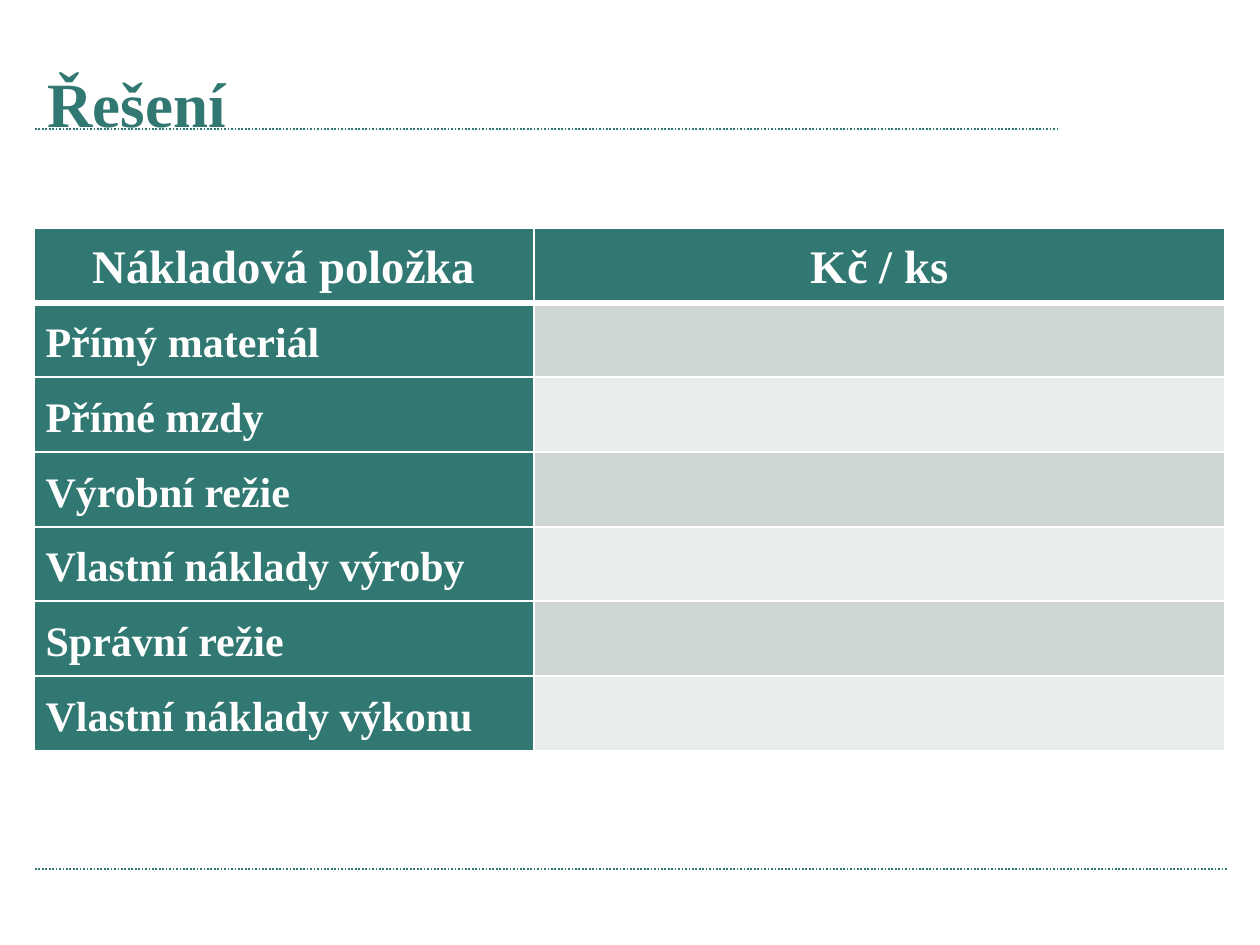
from lxml.etree import SubElement
from pptx import Presentation
from pptx.dml.color import RGBColor
from pptx.enum.dml import MSO_LINE
from pptx.enum.shapes import MSO_CONNECTOR
from pptx.enum.text import MSO_ANCHOR, PP_ALIGN
from pptx.oxml.ns import qn
from pptx.util import Cm, Pt

TEAL, WHITE = "307871", "FFFFFF"
BANDS = ["CDD6D5", "E8ECEB"]
HEADERS = ["Nákladová položka", "Kč / ks"]
ITEMS = ["Přímý materiál", "Přímé mzdy", "Výrobní režie",
         "Vlastní náklady výroby", "Správní režie", "Vlastní náklady výkonu"]


def add_text(p, text, size, color):
    r = p.add_run()
    r.text = text
    r.font.name = "Times New Roman"
    r.font.size = Pt(size)
    r.font.bold = True
    r.font.color.rgb = RGBColor.from_string(color)


def set_borders(cell, widths):
    """Draw white borders; widths maps a side (L, R, T, B) to points."""
    tcPr = cell._tc.get_or_add_tcPr()
    for i, (side, width) in enumerate(widths.items()):
        ln = SubElement(tcPr, qn(f"a:ln{side}"), w=str(Pt(width)))
        fill = SubElement(ln, qn("a:solidFill"))
        SubElement(fill, qn("a:srgbClr"), val=WHITE)
        tcPr.insert(i, ln)


prs = Presentation()
prs.slide_width, prs.slide_height = Cm(19.05), Cm(14.29)
s = prs.slides.add_slide(prs.slide_layouts[5])

# Rules under the title and above the footer
for right, y in [(15.98, 1.95), (18.57, 13.14)]:
    rule = s.shapes.add_connector(MSO_CONNECTOR.STRAIGHT, Cm(0.53), Cm(y), Cm(right), Cm(y))
    rule.line.color.rgb = RGBColor.from_string(TEAL)
    rule.line.width = Pt(0.75)
    rule.line.dash_style = MSO_LINE.ROUND_DOT
    SubElement(rule._element.spPr, qn("a:effectLst"))

title = s.shapes.title
title.left, title.top, title.width, title.height = Cm(0.46), Cm(0.74), Cm(16.79), Cm(1.5)
tf = title.text_frame
tf.vertical_anchor = MSO_ANCHOR.BOTTOM
p = tf.paragraphs[0]
p.alignment = PP_ALIGN.LEFT
add_text(p, "Řešení", 27, TEAL)

# Cost table
rows = [HEADERS] + [[item, ""] for item in ITEMS]
row_height = Cm(1.13)
table = s.shapes.add_table(len(rows), 2, Cm(0.51), Cm(3.45), Cm(18.01),
                           row_height * len(rows)).table
table.columns[0].width, table.columns[1].width = Cm(7.57), Cm(10.44)

for i, row in enumerate(rows):
    table.rows[i].height = row_height
    is_header = i == 0
    for j, text in enumerate(row):
        cell = table.cell(i, j)
        cell.vertical_anchor = MSO_ANCHOR.MIDDLE
        cell.margin_left = cell.margin_right = Cm(0.18)
        cell.margin_top = cell.margin_bottom = 0
        cell.fill.solid()
        color = TEAL if is_header or j == 0 else BANDS[(i - 1) % 2]
        cell.fill.fore_color.rgb = RGBColor.from_string(color)
        set_borders(cell, {"L": 1, "R": 1, "T": 3 if i == 1 else 1, "B": 3 if is_header else 1})
        if not text:
            continue
        p = cell.text_frame.paragraphs[0]
        if is_header:
            p.alignment = PP_ALIGN.CENTER
            p.line_spacing = 1.07
        else:
            p.line_spacing = 1.15
            p.space_after = Pt(10)
        add_text(p, text, 20 if is_header else 18, WHITE)

prs.save("out.pptx")
